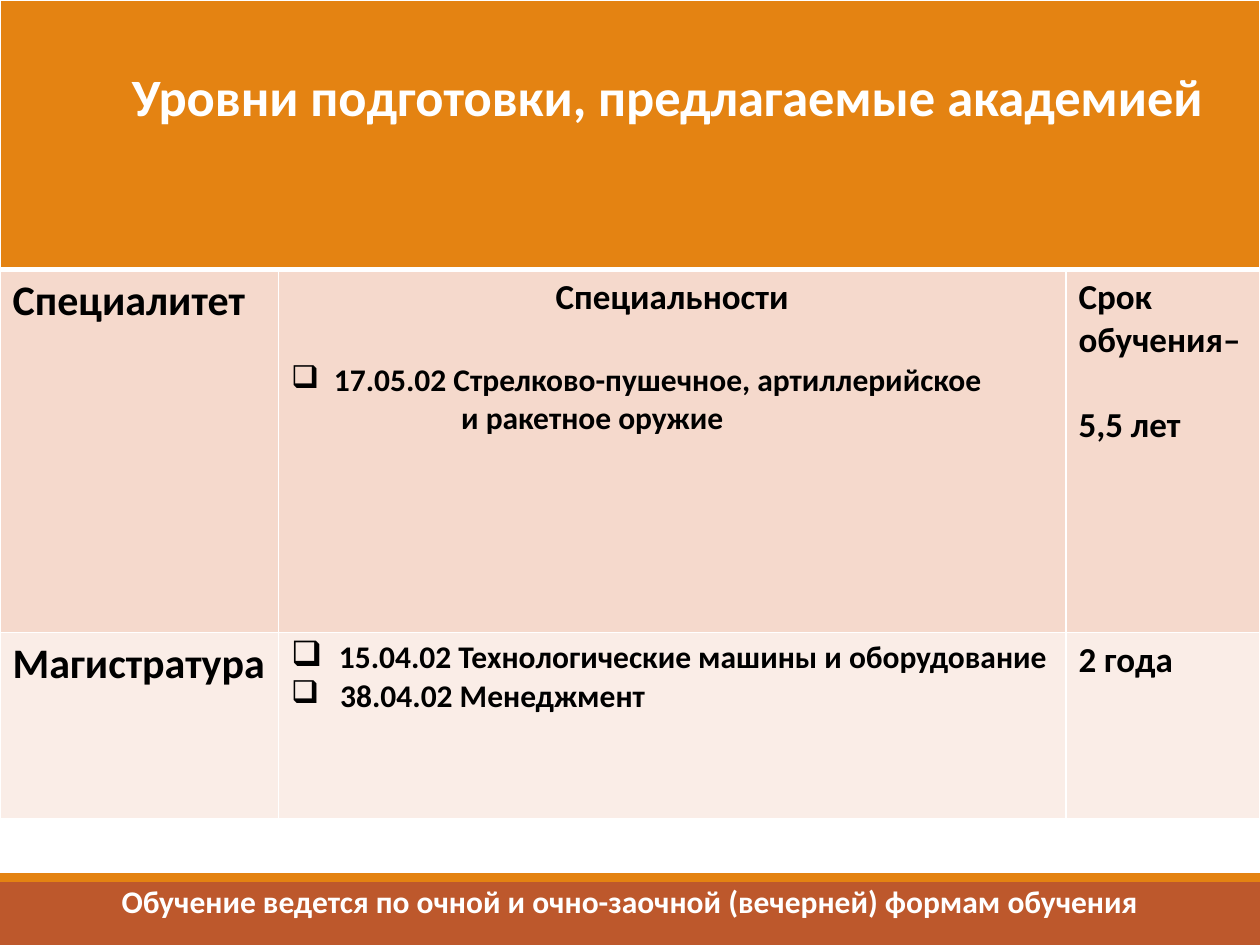
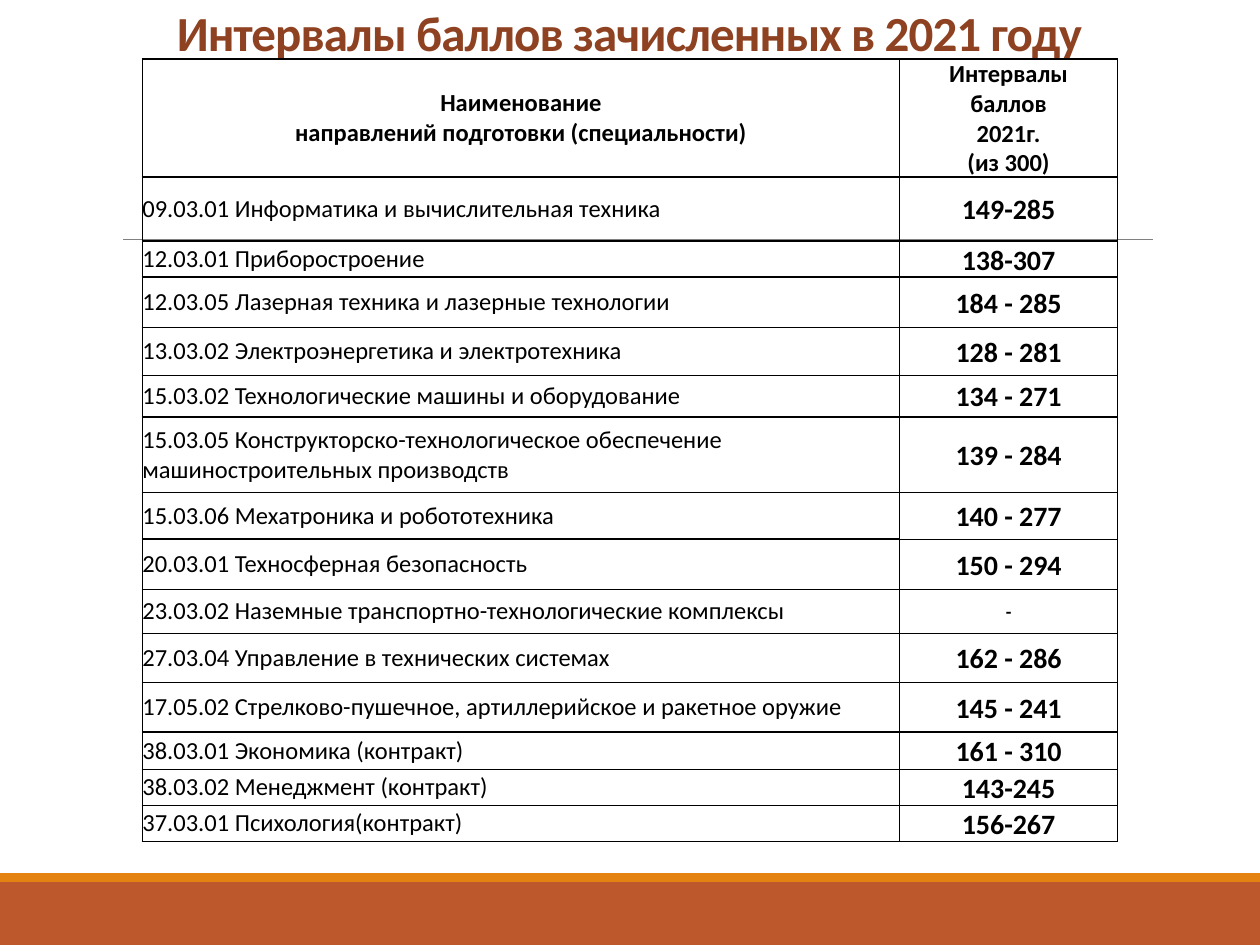
from dataclasses import dataclass

from lxml.etree import SubElement
from pptx import Presentation
from pptx.dml.color import RGBColor
from pptx.enum.shapes import MSO_CONNECTOR, MSO_SHAPE
from pptx.enum.text import MSO_ANCHOR, PP_ALIGN
from pptx.oxml.ns import qn
from pptx.util import Inches, Length, Pt

WIDTH, HEIGHT = Inches(10), Inches(7.5)
PLAIN_TABLE_STYLE = "{2D5ABB26-0587-4C30-8999-92F81FD0307C}"


# Theme: colours and type sizes
@dataclass(frozen=True)
class Theme:
    font: str = "Calibri"
    orange: str = "E48312"
    rust: str = "BD582C"
    brown: str = "8E4221"
    peach: str = "F5D9CC"
    cream: str = "FAEDE7"
    white: str = "FFFFFF"
    black: str = "000000"
    grey: str = "808080"
    banner: float = 30
    title: float = 28
    level: float = 24
    heading: float = 20
    body: float = 18
    score: float = 16
    programme: float = 14
    dash: float = 10.5


THEME = Theme()


@dataclass(frozen=True)
class Band:
    top: float
    height: float
    color: str


@dataclass(frozen=True)
class Programme:
    name: str
    score: str
    height: float
    size: float = THEME.score
    thin_above: bool = False
    thin_below: bool = False


# Positions and lengths are percentages of the slide
BANDS = [Band(93.33, 6.67, THEME.rust), Band(92.4, 0.93, THEME.orange)]

PROGRAMMES = [
    Programme("09.03.01 Информатика и вычислительная техника", "149-285", 6.8),
    Programme("12.03.01 Приборостроение", "138-307", 3.73),
    Programme("12.03.05 Лазерная техника и лазерные технологии", "184 - 285", 5.33),
    Programme("13.03.02 Электроэнергетика и электротехника", "128 - 281", 5.07),
    Programme("15.03.02 Технологические машины и оборудование", "134 - 271", 4.4),
    Programme("15.03.05 Конструкторско-технологическое обеспечение "
              "машиностроительных производств", "139 - 284", 8),
    Programme("15.03.06 Мехатроника и робототехника", "140 - 277", 4.93,
              thin_below=True),
    Programme("20.03.01 Техносферная безопасность", "150 - 294", 5.33,
              thin_above=True, thin_below=True),
    Programme("23.03.02 Наземные транспортно-технологические комплексы", "-", 4.67,
              size=THEME.dash, thin_above=True),
    Programme("27.03.04 Управление в технических системах", "162 - 286", 5.2),
    Programme("17.05.02 Стрелково-пушечное, артиллерийское и ракетное оружие",
              "145 - 241", 5.2),
    Programme("38.03.01 Экономика (контракт)", "161 - 310", 4),
    Programme("38.03.02 Менеджмент (контракт)", "143-245", 3.73),
    Programme("37.03.01 Психология(контракт)", "156-267", 3.73),
]


def across(percent: float) -> Length:
    return Length(round(WIDTH * percent / 100))


def down(percent: float) -> Length:
    return Length(round(HEIGHT * percent / 100))


def rgb(color: str) -> RGBColor:
    return RGBColor.from_string(color)


def write(frame, text: str, *, size: float, color: str = THEME.black, bold: bool = True,
          align=PP_ALIGN.LEFT, before: float = 0, spacing: float = 1,
          tracking: float = 0, left: float = 0, hanging: float = 0,
          bullet_percent: int = 0) -> None:
    """Add one formatted paragraph, using the empty first one if it is free."""
    para = frame.paragraphs[0]
    if para.runs:
        para = frame.add_paragraph()
    properties = para._p.get_or_add_pPr()
    if left:
        properties.set("marL", str(across(left)))
        properties.set("indent", str(-across(hanging)))
    if bullet_percent:
        SubElement(properties, qn("a:buSzPct"), val=str(bullet_percent * 1000))
        SubElement(properties, qn("a:buChar"), char="❑")
    para.alignment = align
    para.line_spacing = spacing
    if before:
        para.space_before = Pt(before)
    span = para.add_run()
    span.text = text
    span.font.name = THEME.font
    span.font.size = Pt(size)
    span.font.bold = bold
    span.font.color.rgb = rgb(color)
    if tracking:
        span._r.get_or_add_rPr().set("spc", str(round(tracking * 100)))


def add_text_box(page, left: float, top: float, width: float, height: float):
    box = page.shapes.add_textbox(across(left), down(top), across(width), down(height))
    box.text_frame.word_wrap = True
    return box.text_frame


def add_bands(page) -> None:
    for band in BANDS:
        box = page.shapes.add_shape(MSO_SHAPE.RECTANGLE, 0, down(band.top),
                                    WIDTH, down(band.height))
        box.shadow.inherit = False
        box.fill.solid()
        box.fill.fore_color.rgb = rgb(band.color)
        box.line.fill.background()


def add_rule(page) -> None:
    rule = page.shapes.add_connector(MSO_CONNECTOR.STRAIGHT, across(9.8), down(25.33),
                                     across(91.5), down(25.33))
    rule.line.color.rgb = rgb(THEME.grey)
    rule.line.width = Pt(0.5)
    SubElement(rule._element.spPr, qn("a:effectLst"))


def add_grid(page, left: float, top: float, columns: list[float], rows: list[float]):
    """Add a table without style; columns and rows are percentages."""
    table = page.shapes.add_table(len(rows), len(columns), across(left), down(top),
                                  across(sum(columns)), down(sum(rows))).table
    table.first_row = table.horz_banding = False
    table._tbl.tblPr.find(qn("a:tableStyleId")).text = PLAIN_TABLE_STYLE
    for column, width in zip(table.columns, columns):
        column.width = across(width)
    for row, height in zip(table.rows, rows):
        row.height = down(height)
    return table


def dress(cell, *, border: str, fill: str = "", above: float = 1, below: float = 1,
          side_inset: float = 0, end_inset: float = 0, anchor=MSO_ANCHOR.TOP):
    """Set borders, fill, insets and anchor; return the cell's text frame."""
    properties = cell._tc.get_or_add_tcPr()
    widths = {"a:lnL": 1, "a:lnR": 1, "a:lnT": above, "a:lnB": below}
    for tag, width in widths.items():
        edge = SubElement(properties, qn(tag), w=str(Pt(width)))
        paint = SubElement(edge, qn("a:solidFill"))
        SubElement(paint, qn("a:srgbClr"), val=border)
    if fill:
        cell.fill.solid()
        cell.fill.fore_color.rgb = rgb(fill)
    else:
        cell.fill.background()
    cell.margin_left = cell.margin_right = across(side_inset)
    cell.margin_top = cell.margin_bottom = down(end_inset)
    cell.vertical_anchor = anchor
    return cell.text_frame


# Slide 1: levels of training
def add_levels_page(deck) -> None:
    page = deck.slides.add_slide(deck.slide_layouts[6])
    add_bands(page)
    table = add_grid(page, 0, 0, [22.1, 62.5, 15.4], [28.53, 38.4, 19.73])
    fills = [THEME.orange, THEME.peach, THEME.cream]
    frames = []
    for row, fill in enumerate(fills):
        frames.append([
            dress(table.cell(row, column), border=THEME.white, fill=fill,
                  above=3 if row == 1 else 1, below=3 if row == 0 else 1,
                  side_inset=1, end_inset=0.67)
            for column in range(3)])

    # Banner across the table
    banner = table.cell(0, 0)
    banner.merge(table.cell(0, 2))
    banner.margin_left, banner.margin_top = across(7), down(7)
    write(banner.text_frame, "Уровни подготовки, предлагаемые академией",
          size=THEME.banner, color=THEME.white, align=PP_ALIGN.CENTER)

    # Specialist and master's levels
    level, subjects, term = frames[1]
    write(level, "Специалитет", size=THEME.level)
    write(subjects, "Специальности", size=THEME.heading, align=PP_ALIGN.CENTER)
    write(subjects, "17.05.02 Стрелково-пушечное, артиллерийское", size=THEME.body,
          before=24.4, left=3.4, hanging=3.4, bullet_percent=100)
    write(subjects, "и ракетное оружие", size=THEME.body, left=13.5)
    write(term, "Срок обучения–", size=THEME.heading)
    write(term, "5,5 лет", size=THEME.heading, before=24.4)

    level, subjects, term = frames[2]
    write(level, "Магистратура", size=THEME.level)
    write(subjects, "15.04.02 Технологические машины и оборудование",
          size=THEME.body, left=3.8, hanging=3.8, bullet_percent=111)
    write(subjects, "38.04.02 Менеджмент", size=THEME.body, left=3.9, hanging=3.9,
          bullet_percent=100)
    write(term, "2 года", size=THEME.heading)

    footer = add_text_box(page, 0, 92.67, 100, 5.33)
    write(footer, "Обучение ведется по очной и очно-заочной (вечерней) формам обучения",
          size=THEME.body, color=THEME.white, align=PP_ALIGN.CENTER)


# Slide 2: score intervals
def add_scores_page(deck) -> None:
    page = deck.slides.add_slide(deck.slide_layouts[6])
    add_bands(page)
    add_rule(page)
    title = add_text_box(page, 3.5, 1.47, 92.9, 5.73)
    title.vertical_anchor = MSO_ANCHOR.BOTTOM
    write(title, "Интервалы баллов зачисленных в 2021 году", size=THEME.title,
          color=THEME.brown, align=PP_ALIGN.CENTER, spacing=0.85, tracking=-0.5)

    heights = [12.27] + [programme.height for programme in PROGRAMMES]
    table = add_grid(page, 11.3, 6.27, [60.1, 17.3], heights)
    headings = [["Наименование", "направлений подготовки (специальности)"],
                ["Интервалы", "баллов", "2021г.", "(из 300)"]]
    for column, lines in enumerate(headings):
        frame = dress(table.cell(0, column), border=THEME.black,
                      anchor=MSO_ANCHOR.MIDDLE)
        for line in lines:
            write(frame, line, size=THEME.programme, align=PP_ALIGN.CENTER)

    for row, programme in enumerate(PROGRAMMES, start=1):
        name = dress(table.cell(row, 0), border=THEME.black, anchor=MSO_ANCHOR.MIDDLE)
        write(name, programme.name, size=THEME.programme, bold=False)
        score = dress(table.cell(row, 1), border=THEME.black, side_inset=0.7,
                      above=0.5 if programme.thin_above else 1,
                      below=0.5 if programme.thin_below else 1,
                      anchor=MSO_ANCHOR.MIDDLE)
        write(score, programme.score, size=programme.size, align=PP_ALIGN.CENTER,
              spacing=1.07)


def main() -> None:
    deck = Presentation()
    deck.slide_width, deck.slide_height = WIDTH, HEIGHT
    add_levels_page(deck)
    add_scores_page(deck)
    deck.save("out.pptx")


if __name__ == "__main__":
    main()
